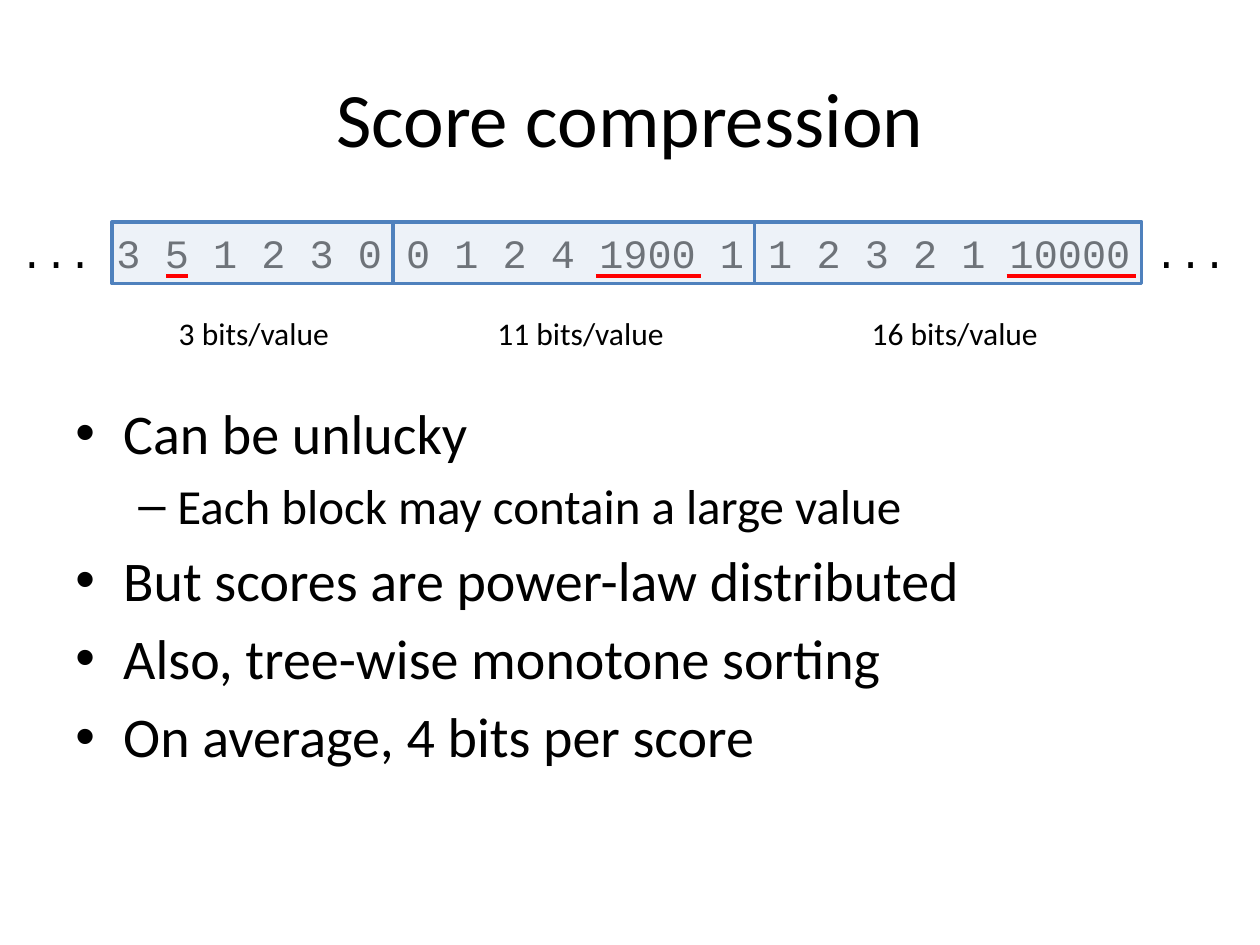
from lxml import etree
from pptx import Presentation
from pptx.dml.color import RGBColor
from pptx.enum.shapes import MSO_CONNECTOR, MSO_SHAPE
from pptx.enum.text import MSO_ANCHOR, MSO_AUTO_SIZE, PP_ALIGN
from pptx.oxml.ns import qn
from pptx.util import Inches, Pt

RECT = MSO_SHAPE.RECTANGLE
STRAIGHT = MSO_CONNECTOR.STRAIGHT
MIDDLE = MSO_ANCHOR.MIDDLE
CENTER = PP_ALIGN.CENTER
GROW = MSO_AUTO_SIZE.SHAPE_TO_FIT_TEXT

BLACK, BLUE, PALE, RED = "000000", "4F81BD", "DCE6F2", "FF0000"
ROW_TOP, ROW_H = 1.76, 0.49
BLOCKS_LEFT = 0.89
LABEL_TOP, LABEL_H = 2.44, 0.4
MARK_Y = 2.19

SCORES = "... 3 5 1 2 3 0 0 1 2 4 1900 1 1 2 3 2 1 10000 ..."
# Block width, label, label left and width, start and end of the red mark
BLOCKS = [
    (2.23, "3 bits/value", 1.32, 1.41, 1.32, 1.49),
    (2.87, "11 bits/value", 3.85, 1.54, 4.73, 5.56),
    (3.07, "16 bits/value", 6.82, 1.54, 7.99, 9.02),
]
BULLETS = [
    (0, "Can be unlucky"),
    (1, "Each block may contain a large value"),
    (0, "But scores are power-law distributed"),
    (0, "Also, tree-wise monotone sorting"),
    (0, "On average, 4 bits per score"),
]
# Bullet sign, text size, left margin and hanging indent for each level
LEVELS = [("•", 32, 0.38, -0.38), ("–", 28, 0.81, -0.31)]


def color(value):
    return RGBColor.from_string(value)


def box(*lengths):
    return [Inches(v) for v in lengths]


def write(p, text, size, font="Calibri"):
    r = p.add_run()
    r.text = text
    for name, value in {"size": Pt(size), "name": font}.items():
        setattr(r.font, name, value)
    r.font.color.rgb = color(BLACK)


def add_title(s, text):
    sp = s.shapes.title
    place = dict(zip(("left", "top", "width", "height"), box(0.5, 0.3, 9, 1.25)))
    for name, value in place.items():
        setattr(sp, name, value)
    tf = sp.text_frame
    tf.vertical_anchor = MIDDLE
    tf.paragraphs[0].alignment = CENTER
    write(tf.paragraphs[0], text, 44)


def add_line_of_text(s, place, text, size, font="Calibri"):
    tf = s.shapes.add_textbox(*box(*place)).text_frame
    tf.word_wrap = False
    tf.auto_size = GROW
    write(tf.paragraphs[0], text, size, font)


def add_block(s, left, width):
    sp = s.shapes.add_shape(RECT, *box(left, ROW_TOP, width, ROW_H))
    sp.shadow.inherit = False
    sp.fill.solid()
    sp.fill.fore_color.rgb = color(PALE)
    # Half transparent, so that the scores show through
    rgb = sp.fill._xPr.find(qn("a:solidFill")).find(qn("a:srgbClr"))
    etree.SubElement(rgb, qn("a:alpha")).set("val", "50000")
    sp.line.color.rgb = color(BLUE)
    sp.line.width = Pt(2)


def add_mark(s, start, end):
    line = s.shapes.add_connector(STRAIGHT, *box(start, MARK_Y, end, MARK_Y))
    line.line.color.rgb = color(RED)
    line.line.width = Pt(2.25)
    etree.SubElement(line._element.spPr, qn("a:effectLst"))


def add_bullets(s, items):
    tf = s.shapes.add_textbox(*box(0.5, 3.11, 9, 3.59)).text_frame
    tf.word_wrap = True
    for i, (level, text) in enumerate(items):
        sign, size, margin, indent = LEVELS[level]
        p = tf.add_paragraph() if i else tf.paragraphs[0]
        p.level = level
        p.space_before = Pt(0.2 * size)
        pPr = p._p.get_or_add_pPr()
        pPr.set("marL", str(Inches(margin)))
        pPr.set("indent", str(Inches(indent)))
        etree.SubElement(pPr, qn("a:buFont")).set("typeface", "Arial")
        etree.SubElement(pPr, qn("a:buChar")).set("char", sign)
        write(p, text, size)


def main():
    prs = Presentation()
    prs.slide_width, prs.slide_height = box(10, 7.5)
    s = prs.slides.add_slide(prs.slide_layouts[5])
    add_title(s, "Score compression")

    # Row of scores under the blocks
    add_line_of_text(s, (0.06, ROW_TOP, 9.88, ROW_H), SCORES, 23, "Courier New")

    # Blocks side by side, each with its label and marked largest value
    left = BLOCKS_LEFT
    for width, label, label_left, label_width, start, end in BLOCKS:
        add_block(s, left, width)
        add_line_of_text(s, (label_left, LABEL_TOP, label_width, LABEL_H), label, 18)
        add_mark(s, start, end)
        left += width

    add_bullets(s, BULLETS)
    prs.save("out.pptx")


if __name__ == "__main__":
    main()
